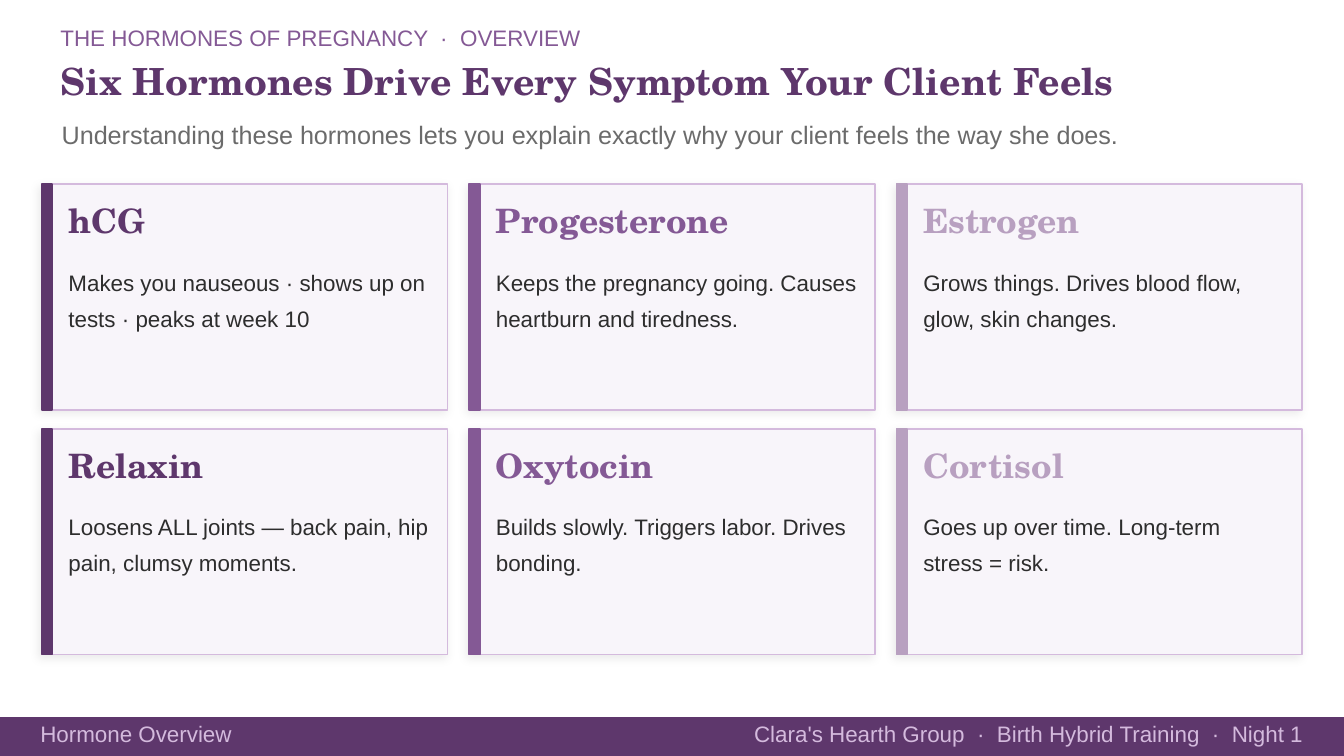
"""Build the hormone overview slide: a heading, six cards and a footer."""
from lxml.etree import SubElement
from pptx import Presentation
from pptx.dml.color import RGBColor
from pptx.enum.shapes import MSO_SHAPE
from pptx.enum.text import PP_ALIGN
from pptx.oxml.ns import qn
from pptx.util import Pt

PLUM = RGBColor(0x5E, 0x37, 0x6C)
VIOLET = RGBColor(0x84, 0x59, 0x95)
MAUVE = RGBColor(0xB8, 0xA0, 0xC0)
LILAC = RGBColor(0xD4, 0xBA, 0xDD)
PALE = RGBColor(0xF8, 0xF5, 0xFA)
GREY = RGBColor(0x6B, 0x6B, 0x6B)
INK = RGBColor(0x2D, 0x2D, 0x2D)

EYEBROW = "THE HORMONES OF PREGNANCY  ·  OVERVIEW"
TITLE = "Six Hormones Drive Every Symptom Your Client Feels"
SUBTITLE = "Understanding these hormones lets you explain exactly why your client feels the way she does."
HORMONES = [
    ("hCG", "Makes you nauseous · shows up on tests · peaks at week 10"),
    ("Progesterone", "Keeps the pregnancy going. Causes heartburn and tiredness."),
    ("Estrogen", "Grows things. Drives blood flow, glow, skin changes."),
    ("Relaxin", "Loosens ALL joints — back pain, hip pain, clumsy moments."),
    ("Oxytocin", "Builds slowly. Triggers labor. Drives bonding."),
    ("Cortisol", "Goes up over time. Long-term stress = risk."),
]
FOOTER_LEFT = "Hormone Overview"
FOOTER_RIGHT = "Clara's Hearth Group  ·  Birth Hybrid Training  ·  Night 1"

SANS = {"name": "Arial", "size": Pt(12)}
SERIF = {"name": "TeX Gyre Schola", "bold": True}
COLUMN_COLORS = [PLUM, VIOLET, MAUVE]
SLIDE_WIDTH, SLIDE_HEIGHT = 720, 405
GRID_LEFT, GRID_TOP = 22.32, 98.64
CARD_WIDTH, CARD_HEIGHT = 217.44, 120.96
COLUMN_PITCH, ROW_PITCH = 228.96, 131.04
ACCENT_WIDTH = 5.76
TEXT_INSET, TEXT_WIDTH = 14.4, 194.4
FOOTER_TOP = 384.48


def add_text(slide, box, text, color, font, **paragraph_format):
    frame = slide.shapes.add_textbox(*map(Pt, box)).text_frame
    frame.word_wrap = True
    for side in ("left", "top", "right", "bottom"):
        setattr(frame, f"margin_{side}", 0)
    paragraph = frame.paragraphs[0]
    for name, value in paragraph_format.items():
        setattr(paragraph, name, value)
    run = paragraph.add_run()
    run.text = text
    for name, value in font.items():
        setattr(run.font, name, value)
    run.font.color.rgb = color


def add_rectangle(slide, box, fill, line):
    shape = slide.shapes.add_shape(MSO_SHAPE.RECTANGLE, *map(Pt, box))
    shape.shadow.inherit = False
    shape.fill.solid()
    shape.fill.fore_color.rgb = fill
    shape.line.color.rgb = line
    shape.line.width = Pt(1)
    return shape


def add_soft_shadow(shape):
    effects = shape._element.spPr.find(qn("a:effectLst"))
    shadow = SubElement(effects, qn("a:outerShdw"), blurRad=str(Pt(5)),
                        dist=str(Pt(2)), dir="8100000", algn="bl", rotWithShape="0")
    color = SubElement(shadow, qn("a:srgbClr"), val="000000")
    SubElement(color, qn("a:alpha"), val="8000")


def add_card(slide, index, name, description):
    row, column = divmod(index, len(COLUMN_COLORS))
    left = GRID_LEFT + column * COLUMN_PITCH
    top = GRID_TOP + row * ROW_PITCH
    color = COLUMN_COLORS[column]
    add_soft_shadow(add_rectangle(slide, (left, top, CARD_WIDTH, CARD_HEIGHT), PALE, LILAC))
    add_rectangle(slide, (left, top, ACCENT_WIDTH, CARD_HEIGHT), color, color)
    text_left = left + TEXT_INSET
    add_text(slide, (text_left, top + 8.64, TEXT_WIDTH, 27.36), name, color,
             SERIF | {"size": Pt(18)})
    add_text(slide, (text_left, top + 40.32, TEXT_WIDTH, 72), description, INK,
             SANS, line_spacing=1.35)


def main():
    presentation = Presentation()
    presentation.slide_width, presentation.slide_height = Pt(SLIDE_WIDTH), Pt(SLIDE_HEIGHT)
    slide = presentation.slides.add_slide(presentation.slide_layouts[6])

    add_text(slide, (32.4, 12.96, 655.2, 15.84), EYEBROW, VIOLET, SANS)
    add_text(slide, (32.4, 28.8, 655.2, 51.84), TITLE, PLUM,
             SERIF | {"size": Pt(20)}, line_spacing=1.1)
    add_text(slide, (33.12, 64.08, 655.2, 25.92), SUBTITLE, GREY, SANS | {"size": Pt(13.5)})

    for index, (name, description) in enumerate(HORMONES):
        add_card(slide, index, name, description)

    add_rectangle(slide, (0, FOOTER_TOP, SLIDE_WIDTH, SLIDE_HEIGHT - FOOTER_TOP), PLUM, PLUM)
    add_text(slide, (21.6, 385.92, 396, 18), FOOTER_LEFT, LILAC, SANS)
    add_text(slide, (0, 385.92, 698.4, 18), FOOTER_RIGHT, LILAC, SANS, alignment=PP_ALIGN.RIGHT)

    presentation.save("out.pptx")


if __name__ == "__main__":
    main()
